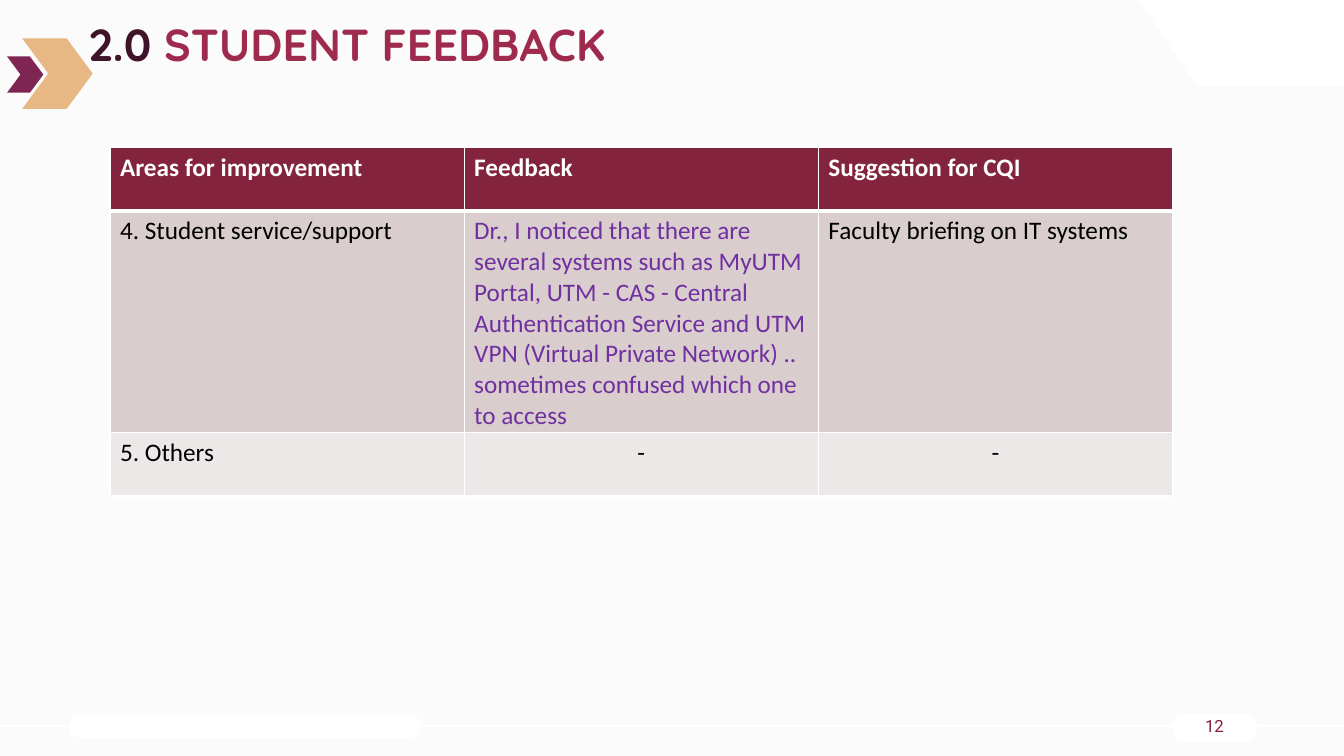
from dataclasses import dataclass

from lxml import etree
from pptx import Presentation
from pptx.dml.color import RGBColor
from pptx.enum.shapes import MSO_CONNECTOR, MSO_SHAPE
from pptx.enum.text import MSO_ANCHOR, PP_ALIGN
from pptx.oxml.ns import qn
from pptx.slide import Slide
from pptx.table import _Cell
from pptx.text.text import Font
from pptx.util import Inches, Pt

CHEVRON, PILL = MSO_SHAPE.CHEVRON, MSO_SHAPE.ROUNDED_RECTANGLE
STRAIGHT = MSO_CONNECTOR.STRAIGHT
LEFT, CENTER = PP_ALIGN.LEFT, PP_ALIGN.CENTER
TOP, MIDDLE = MSO_ANCHOR.TOP, MSO_ANCHOR.MIDDLE
TITLE_ONLY = 5

SLIDE_WIDTH, SLIDE_HEIGHT = Inches(13.33), Inches(7.5)


@dataclass(frozen=True)
class Theme:
    background: str = "FBFBFB"
    white: str = "FFFFFF"
    black: str = "000000"
    plum: str = "7F2551"
    sand: str = "E8B884"
    title_dark: str = "3F1328"
    title_red: str = "9E2A4D"
    page_number: str = "83233E"
    header: str = "83233D"
    band_dark: str = "D9CDCE"
    band_light: str = "EDE8E8"
    quote: str = "7030A0"
    title_font: str = "Quicksand"
    number_font: str = "Roboto"
    table_font: str = "Calibri"
    title_size: int = 32
    table_size: int = 18
    number_size: int = 12


THEME = Theme()


@dataclass(frozen=True)
class Box:
    """A rectangle on a grid of 100 columns by 100 rows over the slide."""
    left: float
    top: float
    width: float
    height: float

    def lengths(self) -> tuple[int, int, int, int]:
        return (columns(self.left), rows(self.top),
                columns(self.width), rows(self.height))


@dataclass(frozen=True)
class Ornament:
    preset: int
    box: Box
    adjustment: float
    color: str


@dataclass(frozen=True)
class CellText:
    text: str
    color: str = THEME.black
    alignment: int = LEFT


@dataclass(frozen=True)
class TableRow:
    height: float
    fill: str
    cells: tuple[CellText, ...]
    bold: bool = False
    top_border: float = 1
    bottom_border: float = 1


ORNAMENTS = (
    Ornament(PILL, Box(5.18, 94.53, 26.11, 3.07), 0.44, THEME.white),
    Ornament(PILL, Box(87.25, 94.4, 6.23, 3.73), 0.44, THEME.white),
    Ornament(CHEVRON, Box(0.53, 7.47, 2.7, 4.8), 0.37, THEME.plum),
    Ornament(CHEVRON, Box(1.65, 5.07, 5.25, 9.33), 0.37, THEME.sand),
)
FOOTER_LINE_ROW = 96
CORNER = ((84.77, 0), (100, 0), (100, 11.33), (89.05, 11.33))
TITLE_BOX = Box(6.6, 1.6, 60, 8.53)
NUMBER_BOX = Box(87.25, 93.73, 6.23, 4.67)

TABLE_LEFT, TABLE_TOP, TABLE_WIDTH = 8.18, 19.47, 79.07
FEEDBACK = (
    "Dr., I noticed that there are several systems such as MyUTM Portal, "
    "UTM - CAS - Central Authentication Service and UTM VPN (Virtual Private "
    "Network) .. sometimes confused which one to access"
)
TABLE_ROWS = (
    TableRow(8.4, THEME.header, (
        CellText("Areas for improvement", THEME.white),
        CellText("Feedback", THEME.white),
        CellText("Suggestion for CQI", THEME.white),
    ), bold=True, bottom_border=3),
    TableRow(29.33, THEME.band_dark, (
        CellText("4. Student service/support"),
        CellText(FEEDBACK, THEME.quote),
        CellText("Faculty briefing on IT systems"),
    ), top_border=3),
    TableRow(8.4, THEME.band_light, (
        CellText("5. Others"),
        CellText("-", alignment=CENTER),
        CellText("-", alignment=CENTER),
    )),
)


def columns(count: float) -> int:
    return round(SLIDE_WIDTH * count / 100)


def rows(count: float) -> int:
    return round(SLIDE_HEIGHT * count / 100)


def rgb(color: str) -> RGBColor:
    return RGBColor.from_string(color)


def style_font(font: Font, name: str, size: int, color: str, bold: bool = False) -> None:
    font.name, font.size, font.bold = name, Pt(size), bold
    font.color.rgb = rgb(color)


def paint(shape, color: str) -> None:
    shape.shadow.inherit = False
    shape.fill.solid()
    shape.fill.fore_color.rgb = rgb(color)
    shape.line.fill.background()


def draw_footer_line(slide: Slide) -> None:
    height = rows(FOOTER_LINE_ROW)
    line = slide.shapes.add_connector(STRAIGHT, 0, height, SLIDE_WIDTH, height)
    line.line.color.rgb = rgb(THEME.white)
    line.line.width = Pt(1.5)
    etree.SubElement(line._element.spPr, qn("a:effectLst"))


def draw_corner(slide: Slide) -> None:
    points = [(columns(x), rows(y)) for x, y in CORNER]
    builder = slide.shapes.build_freeform(*points[0])
    builder.add_line_segments(points[1:], close=True)
    paint(builder.convert_to_shape(), THEME.white)


def draw_ornament(slide: Slide, ornament: Ornament) -> None:
    shape = slide.shapes.add_shape(ornament.preset, *ornament.box.lengths())
    shape.adjustments[0] = ornament.adjustment
    paint(shape, ornament.color)


def write_title(slide: Slide) -> None:
    title = slide.shapes.title
    title.left, title.top, title.width, title.height = TITLE_BOX.lengths()
    frame = title.text_frame
    frame.vertical_anchor = TOP
    frame.margin_left = frame.margin_right = 0
    paragraph = frame.paragraphs[0]
    paragraph.alignment = LEFT
    for text, color in (("2.0 ", THEME.title_dark), ("STUDENT FEEDBACK", THEME.title_red)):
        run = paragraph.add_run()
        run.text = text
        style_font(run.font, THEME.title_font, THEME.title_size, color, bold=True)


def write_page_number(slide: Slide) -> None:
    frame = slide.shapes.add_textbox(*NUMBER_BOX.lengths()).text_frame
    frame.word_wrap = True
    frame.vertical_anchor = MIDDLE
    frame.text = "12"
    paragraph = frame.paragraphs[0]
    paragraph.alignment = CENTER
    style_font(paragraph.runs[0].font, THEME.number_font, THEME.number_size, THEME.page_number)


def add_borders(cell: _Cell, top: float, bottom: float) -> None:
    properties = cell._tc.get_or_add_tcPr()
    for side, width in (("L", 1), ("R", 1), ("T", top), ("B", bottom)):
        line = etree.SubElement(properties, qn(f"a:ln{side}"), w=str(Pt(width)))
        fill = etree.SubElement(line, qn("a:solidFill"))
        etree.SubElement(fill, qn("a:srgbClr"), val=THEME.white)


def draw_table(slide: Slide) -> None:
    box = Box(TABLE_LEFT, TABLE_TOP, TABLE_WIDTH, sum(row.height for row in TABLE_ROWS))
    table = slide.shapes.add_table(
        len(TABLE_ROWS), len(TABLE_ROWS[0].cells), *box.lengths()).table
    for row_index, row in enumerate(TABLE_ROWS):
        table.rows[row_index].height = rows(row.height)
        for column_index, content in enumerate(row.cells):
            cell = table.cell(row_index, column_index)
            add_borders(cell, row.top_border, row.bottom_border)
            cell.fill.solid()
            cell.fill.fore_color.rgb = rgb(row.fill)
            cell.text_frame.text = content.text
            paragraph = cell.text_frame.paragraphs[0]
            paragraph.alignment = content.alignment
            style_font(paragraph.runs[0].font, THEME.table_font, THEME.table_size,
                       content.color, row.bold)


def main() -> None:
    presentation = Presentation()
    presentation.slide_width, presentation.slide_height = SLIDE_WIDTH, SLIDE_HEIGHT
    slide = presentation.slides.add_slide(presentation.slide_layouts[TITLE_ONLY])
    slide.background.fill.solid()
    slide.background.fill.fore_color.rgb = rgb(THEME.background)
    draw_footer_line(slide)
    draw_corner(slide)
    for ornament in ORNAMENTS:
        draw_ornament(slide, ornament)
    write_title(slide)
    write_page_number(slide)
    draw_table(slide)
    presentation.save("out.pptx")


if __name__ == "__main__":
    main()
